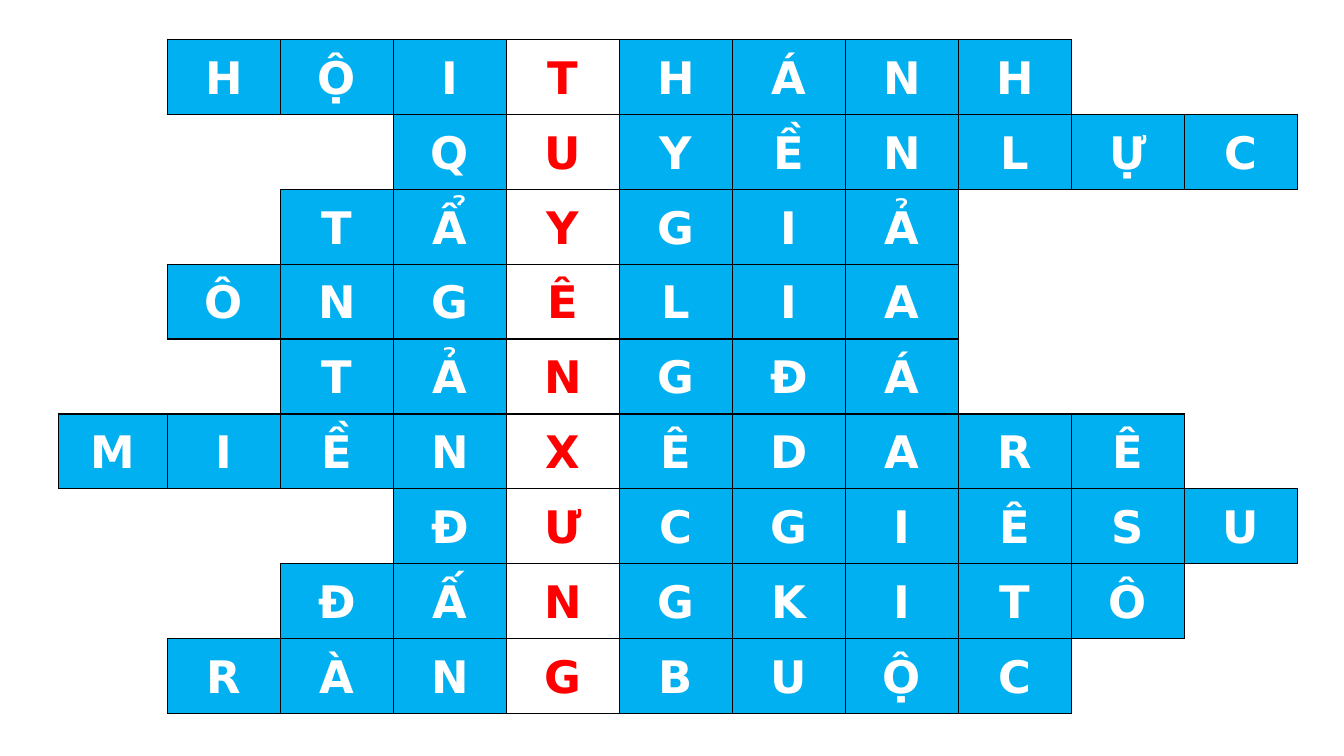
from dataclasses import dataclass

from lxml import etree
from pptx import Presentation
from pptx import util as u
from pptx.dml.color import RGBColor
from pptx.enum import text
from pptx.oxml import ns


@dataclass(frozen=True)
class Theme:
    """Colours, type and line sizes of the crossword."""
    tile: str = "00B0F0"
    key_tile: str = "FFFFFF"
    letter: str = "FFFFFF"
    key_letter: str = "FF0000"
    rule: str = "000000"
    font: str = "DejaVu Sans"
    size: int = 32
    rule_width: int = 1
    spacing: float = 1.07


THEME = Theme()
SLIDE_SIZE = (13.33, 7.5)
CROSSWORD_BOX = (0.58, 0.39, 12.29, 6.69)
FIRST_COLUMN = 1.08
COLUMNS = 11
KEY_COLUMN = 4
ANSWERS = [
    ("HỘI", "T", "HÁNH"),
    ("Q", "U", "YỀNLỰC"),
    ("TẨ", "Y", "GIẢ"),
    ("ÔNG", "Ê", "LIA"),
    ("TẢ", "N", "GĐÁ"),
    ("MIỀN", "X", "ÊDARÊ"),
    ("Đ", "Ư", "CGIÊSU"),
    ("ĐẤ", "N", "GKITÔ"),
    ("RÀN", "G", "BUỘC"),
]
EDGES = {"lnL": (0, -1), "lnR": (0, 1), "lnT": (-1, 0), "lnB": (1, 0)}
CELL_FORMAT = {
    "margin_left": u.Inches(0.07),
    "margin_right": u.Inches(0.07),
    "margin_top": 0,
    "margin_bottom": 0,
    "vertical_anchor": text.MSO_ANCHOR.MIDDLE,
}
LETTER_FORMAT = {"name": THEME.font, "size": u.Pt(THEME.size), "bold": True}


def apply_format(target, values):
    """Set each named attribute on the target."""
    for name, value in values.items():
        setattr(target, name, value)


def place_letters():
    """Map (row, column) to a letter, lining answers up on the key column."""
    return {
        (row, KEY_COLUMN - len(before) + step): letter
        for row, (before, key, after) in enumerate(ANSWERS)
        for step, letter in enumerate(before + key + after)
    }


def draw_edges(cell, position, letters):
    """Rule every edge that touches a lettered cell and clear the others."""
    row, column = position
    properties = cell._tc.get_or_add_tcPr()
    for tag, (down, across) in EDGES.items():
        edge = etree.SubElement(properties, ns.qn(f"a:{tag}"), w=str(u.Pt(THEME.rule_width)))
        if position in letters or (row + down, column + across) in letters:
            ink = etree.SubElement(edge, ns.qn("a:solidFill"))
            etree.SubElement(ink, ns.qn("a:srgbClr"), val=THEME.rule)
        else:
            etree.SubElement(edge, ns.qn("a:noFill"))


def write_letter(cell, letter, is_key):
    """Fill a cell and centre its letter."""
    cell.fill.solid()
    cell.fill.fore_color.rgb = RGBColor.from_string(THEME.key_tile if is_key else THEME.tile)
    line = cell.text_frame.paragraphs[0]
    apply_format(line, {"alignment": text.PP_ALIGN.CENTER, "line_spacing": THEME.spacing})
    run = line.add_run()
    run.text = letter
    apply_format(run.font, LETTER_FORMAT)
    run.font.color.rgb = RGBColor.from_string(THEME.key_letter if is_key else THEME.letter)


def add_crossword(slide, box):
    """Build the crossword table inside the given box."""
    left, top, width, height = box
    crossword = slide.shapes.add_table(len(ANSWERS), COLUMNS, *map(u.Inches, box)).table
    apply_format(crossword, {"first_row": False, "horz_banding": False})
    for index, column in enumerate(crossword.columns):
        share = (width - FIRST_COLUMN) / (COLUMNS - 1)
        column.width = u.Inches(share if index else FIRST_COLUMN)
    for row in crossword.rows:
        row.height = u.Inches(height / len(ANSWERS))

    letters = place_letters()
    for row in range(len(ANSWERS)):
        for column in range(COLUMNS):
            cell = crossword.cell(row, column)
            apply_format(cell, CELL_FORMAT)
            draw_edges(cell, (row, column), letters)
            if (row, column) in letters:
                write_letter(cell, letters[row, column], column == KEY_COLUMN)
            else:
                cell.fill.background()


def main():
    """Create the crossword slide and save it."""
    deck = Presentation()
    deck.slide_width, deck.slide_height = map(u.Inches, SLIDE_SIZE)
    slide = deck.slides.add_slide(deck.slide_layouts[6])
    add_crossword(slide, CROSSWORD_BOX)
    deck.save("out.pptx")


if __name__ == "__main__":
    main()
